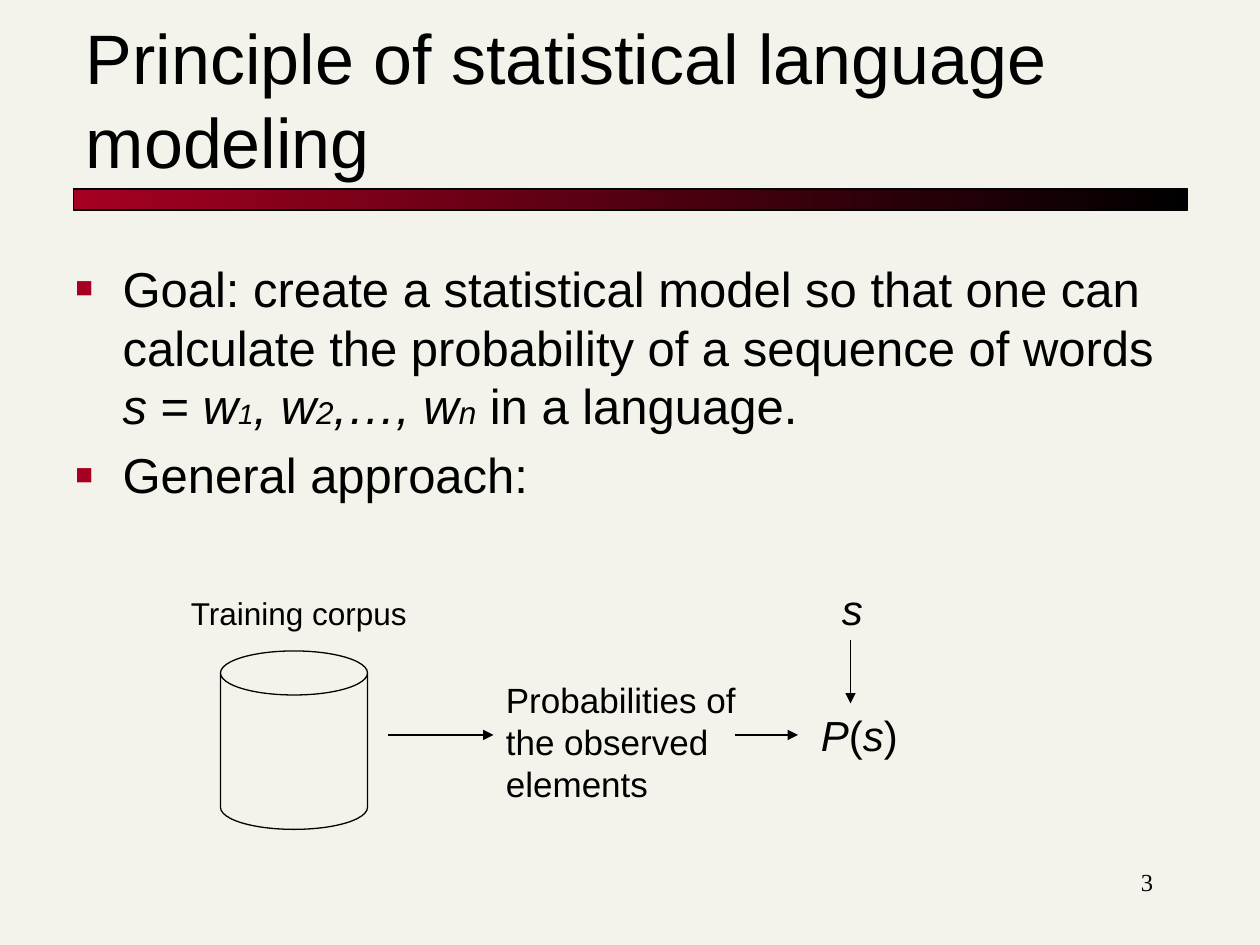
from lxml import etree
from pptx import Presentation
from pptx.dml.color import RGBColor
from pptx.enum.shapes import MSO_CONNECTOR, MSO_SHAPE
from pptx.enum.text import MSO_ANCHOR, PP_ALIGN
from pptx.oxml.ns import qn
from pptx.util import Pt

RECTANGLE, CAN = MSO_SHAPE.RECTANGLE, MSO_SHAPE.CAN
STRAIGHT = MSO_CONNECTOR.STRAIGHT
TOP, BOTTOM = MSO_ANCHOR.TOP, MSO_ANCHOR.BOTTOM
LEFT, RIGHT = PP_ALIGN.LEFT, PP_ALIGN.RIGHT

COLORS = {"background": "F4F3EB", "accent": "A50021", "ink": "000000"}
LINE_WIDTH = 0.75
BULLET_INDENT = 27
FLOW_Y = 420
INPUT_X = 486

# Each run is (text, size, italic)
GOAL = [
    ("Goal: create a statistical model so that one can calculate "
     "the probability of a sequence of words ", 28, False),
    ("s", 28, True), (" = ", 28, False),
    ("w", 28, True), ("1", 16, True),
    (", w", 28, True), ("2", 18, True),
    (",…, w", 28, True), ("n", 18, True),
    (" in a language.", 28, False),
]
APPROACH = [("General approach:", 28, False)]
PROBABILITY = [("P", 24, True), ("(", 24, False), ("s", 24, True), (")", 24, False)]


def color(name):
    return RGBColor.from_string(COLORS[name])


def add_runs(paragraph, runs, font):
    for text, size, italic in runs:
        run = paragraph.add_run()
        run.text = text
        run.font.name = font
        run.font.size = Pt(size)
        run.font.italic = italic
        run.font.color.rgb = color("ink")


def add_text(slide, box, paragraphs, font="Arial", align=LEFT, anchor=TOP,
             space_before=0):
    frame = slide.shapes.add_textbox(*map(Pt, box)).text_frame
    frame.word_wrap = True
    frame.vertical_anchor = anchor
    for index, runs in enumerate(paragraphs):
        paragraph = frame.add_paragraph() if index else frame.paragraphs[0]
        paragraph.alignment = align
        paragraph.space_before = Pt(space_before)
        add_runs(paragraph, runs, font)
    return frame


def add_bullet(paragraph):
    """Give the paragraph a hanging square bullet in the accent colour."""
    props = paragraph._p.get_or_add_pPr()
    props.set("marL", str(Pt(BULLET_INDENT)))
    props.set("indent", str(-Pt(BULLET_INDENT)))
    bullet_color = etree.SubElement(props, qn("a:buClr"))
    etree.SubElement(bullet_color, qn("a:srgbClr"), val=COLORS["accent"])
    etree.SubElement(props, qn("a:buSzPct"), val="60000")
    etree.SubElement(props, qn("a:buFont"), typeface="Arial")
    etree.SubElement(props, qn("a:buChar"), char="■")


def add_outlined_shape(slide, kind, box):
    shape = slide.shapes.add_shape(kind, *map(Pt, box))
    shape.shadow.inherit = False
    shape.line.color.rgb = color("ink")
    shape.line.width = Pt(LINE_WIDTH)
    return shape


def add_title_bar(slide):
    bar = add_outlined_shape(slide, RECTANGLE, (42, 108, 636.5, 12))
    bar.fill.gradient()
    bar.fill.gradient_angle = 0
    for stop, name, position in zip(bar.fill.gradient_stops, ("accent", "ink"), (0, 1)):
        stop.color.rgb = color(name)
        stop.position = position


def add_corpus(slide):
    corpus = add_outlined_shape(slide, CAN, (126, 372, 84, 102))
    corpus.fill.background()
    corpus.adjustments[0] = 0.3


def add_arrow(slide, start, end):
    arrow = slide.shapes.add_connector(STRAIGHT, *map(Pt, start + end))
    arrow.line.color.rgb = color("ink")
    arrow.line.width = Pt(LINE_WIDTH)
    etree.SubElement(arrow.line._get_or_add_ln(), qn("a:tailEnd"), type="triangle")
    etree.SubElement(arrow._element.spPr, qn("a:effectLst"))


def main():
    deck = Presentation()
    deck.slide_width, deck.slide_height = Pt(720), Pt(540)
    slide = deck.slides.add_slide(deck.slide_layouts[6])
    slide.background.fill.solid()
    slide.background.fill.fore_color.rgb = color("background")

    add_title_bar(slide)
    add_text(slide, (516, 492, 150, 36), [[("3", 14, False)]],
             font="Times New Roman", align=RIGHT)
    add_text(slide, (42, 30, 636, 78),
             [[("Principle of statistical language modeling", 40, False)]], anchor=BOTTOM)
    body = add_text(slide, (36, 144, 648, 356), [GOAL, APPROACH], space_before=5.6)
    for paragraph in body.paragraphs:
        add_bullet(paragraph)

    add_corpus(slide)
    add_text(slide, (102, 336, 144, 29), [[("Training corpus", 18, False)]])
    add_arrow(slide, (222, FLOW_Y), (282, FLOW_Y))
    add_text(slide, (282, 384, 150, 79),
             [[("Probabilities of the observed elements", 20, False)]])
    add_arrow(slide, (420, FLOW_Y), (456, FLOW_Y))
    add_text(slide, (474, 330, 40, 36), [[("s", 24, True)]], space_before=12)
    add_arrow(slide, (INPUT_X, 366), (INPUT_X, 402))
    add_text(slide, (462, 402, 64, 36), [PROBABILITY])
    deck.save("out.pptx")


if __name__ == "__main__":
    main()
